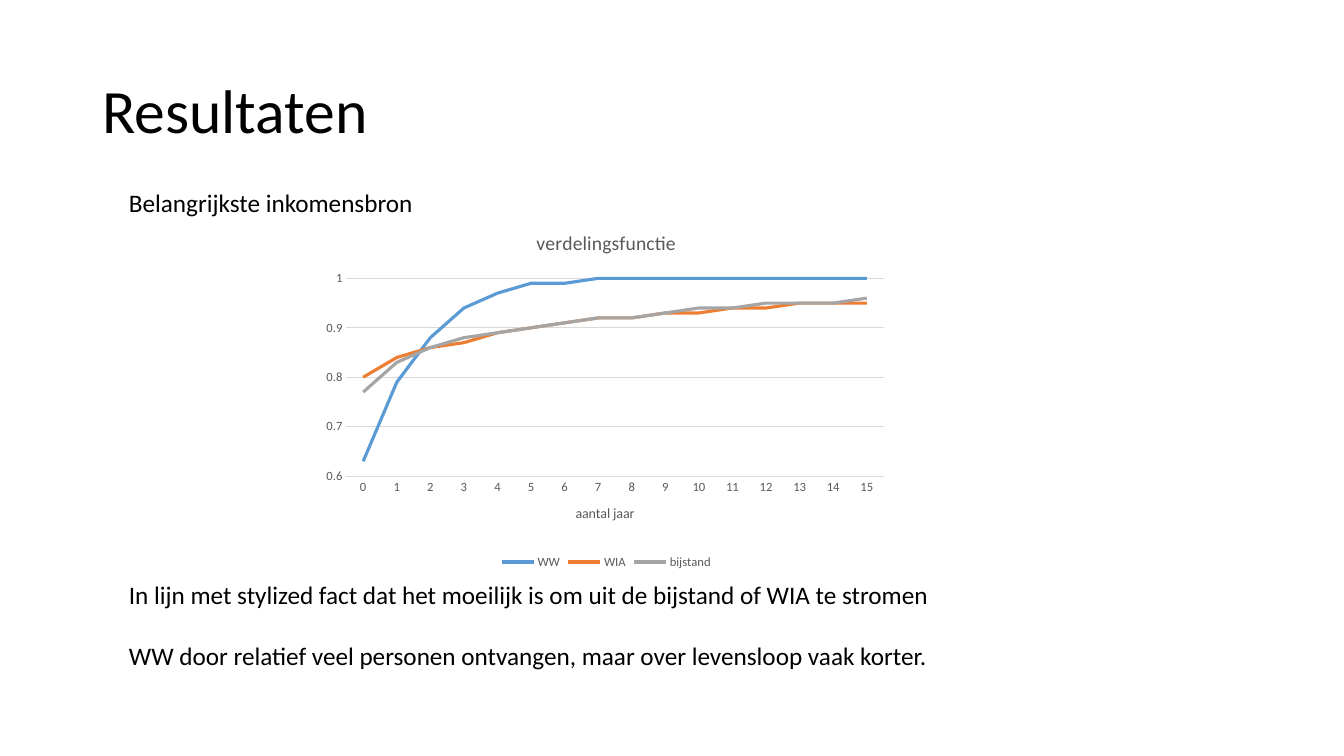
from lxml import etree
from pptx import Presentation
from pptx.chart import data as cd
from pptx.dml.color import RGBColor
from pptx.enum import chart as ce, text
from pptx.oxml import ns
from pptx.util import Pt


def rgb(value):
    return RGBColor.from_string(value)


class Deck:
    """Holds the style and the current slide and adds elements to it."""

    FONT, INK, GREY, GRID = "Calibri", "000000", "595959", "D9D9D9"

    def __init__(self, prs):
        self.s = prs.slides.add_slide(prs.slide_layouts[6])

    def style(self, font, size, color):
        font.name, font.size, font.bold = self.FONT, Pt(size), False
        font.color.rgb = rgb(color)

    def textbox(self, box, lines, size, gap=0, spacing=1.0,
                anchor=text.MSO_ANCHOR.TOP):
        tf = self.s.shapes.add_textbox(*map(Pt, box)).text_frame
        tf.word_wrap = True
        tf.vertical_anchor = anchor
        for i, line in enumerate(lines):
            p = tf.add_paragraph() if i else tf.paragraphs[0]
            p.line_spacing = spacing
            p.space_before = Pt(gap if i else 0)
            r = p.add_run()
            r.text = line
            self.style(r.font, size, self.INK)

    def chart_title(self, owner, title, size):
        owner.has_title = True
        r = self.title_frame(owner).paragraphs[0].add_run()
        r.text = title
        self.style(r.font, size, self.GREY)

    def title_frame(self, owner):
        title = getattr(owner, "chart_title", None) or owner.axis_title
        return title.text_frame

    def axis(self, axis):
        axis.major_tick_mark = axis.minor_tick_mark = ce.XL_TICK_MARK.NONE
        self.style(axis.tick_labels.font, 9, self.GREY)

    def grey_line(self, line):
        line.color.rgb = rgb(self.GRID)
        line.width = Pt(0.75)

    def place_plot(self, chart, **fractions):
        area = chart.plots[0]._element.getparent()
        for old in area.findall(ns.qn("c:layout")):
            area.remove(old)
        layout = etree.Element(ns.qn("c:layout"))
        manual = etree.SubElement(layout, ns.qn("c:manualLayout"))
        settings = dict(layoutTarget="inner", xMode="edge", yMode="edge")
        for key, value in {**settings, **fractions}.items():
            etree.SubElement(manual, ns.qn("c:" + key), val=str(value))
        area.insert(0, layout)

    def line_chart(self, box, title, x_title, categories, series):
        data = cd.CategoryChartData()
        data.categories = categories
        for name, _, values in series:
            data.add_series(name, values)
        chart = self.s.shapes.add_chart(
            ce.XL_CHART_TYPE.LINE, *map(Pt, box), data).chart
        self.style(chart.font, 10, self.INK)
        self.chart_title(chart, title, 14)
        chart.chart_title.include_in_layout = False

        x, y = chart.category_axis, chart.value_axis
        self.axis(x)
        self.axis(y)
        self.chart_title(x, x_title, 10)
        self.grey_line(x.format.line)
        y.format.line.fill.background()
        y.minimum_scale, y.maximum_scale, y.major_unit = 0.6, 1, 0.1
        self.grey_line(y.major_gridlines.format.line)

        chart.has_legend = True
        chart.legend.position = ce.XL_LEGEND_POSITION.BOTTOM
        chart.legend.include_in_layout = False
        self.style(chart.legend.font, 9, self.GREY)

        chart.plots[0].vary_by_categories = False
        for line, (_, color, _) in zip(chart.plots[0].series, series):
            line.smooth = False
            line.marker.style = ce.XL_MARKER_STYLE.NONE
            line.format.line.color.rgb = rgb(color)
            line.format.line.width = Pt(2.25)
        self.place_plot(chart, x=0.05, y=0.18, w=0.93, h=0.55)


def main():
    prs = Presentation()
    prs.slide_width, prs.slide_height = Pt(960), Pt(540)
    deck = Deck(prs)
    deck.textbox((66, 28.8, 828, 104.4), ["Resultaten"], 44, spacing=0.9,
                 anchor=text.MSO_ANCHOR.MIDDLE)
    deck.textbox((85, 410.4, 713.5, 72.7), [
        "In lijn met stylized fact dat het moeilijk is om uit de bijstand of WIA te stromen",
        "WW door relatief veel personen ontvangen, maar over levensloop vaak korter.",
    ], 18, gap=21.6)
    deck.line_chart(
        (226.8, 152.6, 412.6, 257), "verdelingsfunctie", "aantal jaar",
        [str(year) for year in range(16)],
        [("WW", "5B9BD5", [0.63, 0.79, 0.88, 0.94, 0.97, 0.99, 0.99] + [1] * 9),
         ("WIA", "ED7D31", [0.8, 0.84, 0.86, 0.87, 0.89, 0.9, 0.91, 0.92,
                            0.92, 0.93, 0.93, 0.94, 0.94, 0.95, 0.95, 0.95]),
         ("bijstand", "A5A5A5", [0.77, 0.83, 0.86, 0.88, 0.89, 0.9, 0.91, 0.92,
                                 0.92, 0.93, 0.94, 0.94, 0.95, 0.95, 0.95, 0.96])])
    deck.textbox((85, 130.3, 277.2, 28.8), ["Belangrijkste inkomensbron"], 18)
    prs.save("out.pptx")


if __name__ == "__main__":
    main()
